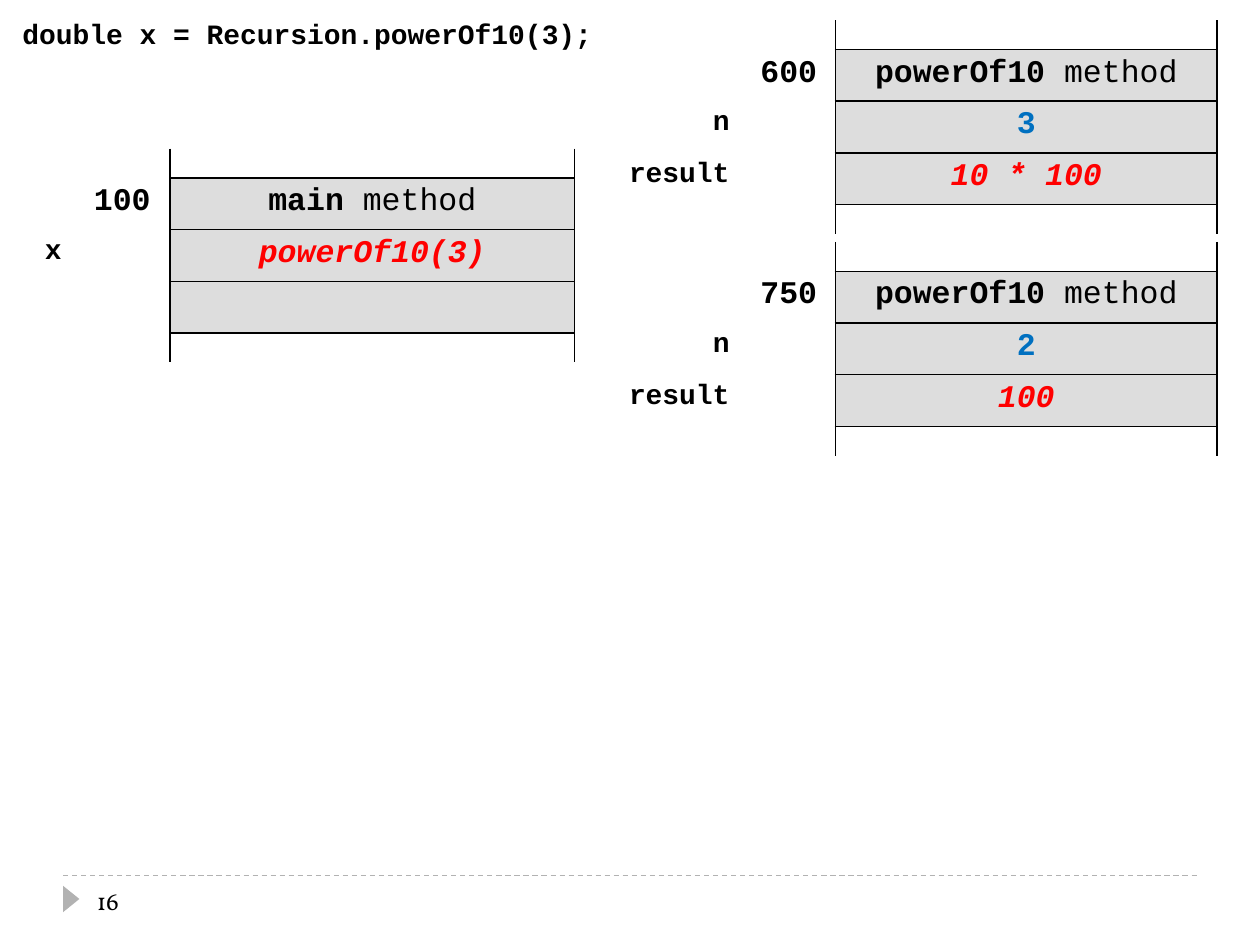
from lxml.etree import SubElement
from pptx import Presentation
from pptx.dml.color import RGBColor
from pptx.enum.dml import MSO_LINE
from pptx.enum.shapes import MSO_CONNECTOR, MSO_SHAPE
from pptx.enum.text import MSO_ANCHOR, PP_ALIGN
from pptx.oxml.ns import qn
from pptx.util import Inches, Pt

CODE = "Courier New"
BLACK, BLUE, RED = "000000", "0070C0", "FF0000"
GRAY, RULE = "DDDDDD", "B2B2B2"
HEIGHTS = [0.23, 0.41, 0.41, 0.41, 0.23]
PLAIN = "{2D5ABB26-0587-4C30-8999-92F81FD0307C}"  # no style, no grid


def color(code):
    return RGBColor.from_string(code)


def style(run, size, code=BLACK, face=CODE, bold=True, italic=False):
    font = run.font
    font.size, font.name = Pt(size), face
    font.bold, font.italic = bold, italic
    font.color.rgb = color(code)


def add_text(slide, box, text, size, face, bold, wrap):
    frame = slide.shapes.add_textbox(*map(Inches, box)).text_frame
    frame.word_wrap = wrap
    frame.vertical_anchor = MSO_ANCHOR.MIDDLE
    frame.text = text
    style(frame.paragraphs[0].runs[0], size, face=face, bold=bold)


def write(cell, text, size, align=PP_ALIGN.CENTER, code=BLACK, italic=False):
    para = cell.text_frame.paragraphs[0]
    para.text = text
    para.alignment = align
    for run in para.runs:
        style(run, size, code, italic=italic)
    return para


def border(cell, sides):
    props = cell._tc.get_or_add_tcPr()
    for spot, side in enumerate(sides):
        line = props.makeelement(qn(f"a:ln{side}"), {"w": str(Pt(1))})
        fill = SubElement(line, qn("a:solidFill"))
        SubElement(fill, qn("a:srgbClr"), val=BLACK)
        props.insert(spot, line)


def add_frame(slide, left, top, widths, address, method, slots):
    """Draw a stack frame; slots hold (name, value, colour, italic)."""
    shape = slide.shapes.add_table(
        len(HEIGHTS), len(widths), Inches(left), Inches(top),
        Inches(sum(widths)), Inches(sum(HEIGHTS)))
    table = shape.table
    table.first_row = table.horz_banding = False
    table._tbl.tblPr.find(qn("a:tableStyleId")).text = PLAIN
    for col, width in zip(table.columns, widths):
        col.width = Inches(width)
    for row, height in zip(table.rows, HEIGHTS):
        row.height = Inches(height)

    para = write(table.cell(1, 2), method + " ", 18)
    word = para.add_run()
    word.text = "method"
    style(word, 18, bold=False)
    write(table.cell(1, 1), address, 18)
    for row, (name, value, code, italic) in enumerate(slots, 2):
        write(table.cell(row, 0), name, 16, PP_ALIGN.RIGHT)
        write(table.cell(row, 2), value, 18, code=code, italic=italic)

    for cell in table.iter_cells():
        if not cell.text:  # small type keeps the end rows low
            SubElement(cell.text_frame.paragraphs[0]._p,
                       qn("a:endParaRPr"), sz="800")
    last = len(HEIGHTS) - 1
    for row in range(len(HEIGHTS)):
        cell = table.cell(row, 2)
        if 0 < row < last:
            cell.fill.solid()
            cell.fill.fore_color.rgb = color(GRAY)
        border(cell, {0: "LRB", last: "LRT"}.get(row, "LRTB"))


def add_footer(slide, number):
    line = slide.shapes.add_connector(
        MSO_CONNECTOR.STRAIGHT, Inches(0.5), Inches(6.95),
        Inches(9.5), Inches(6.95))
    line.line.color.rgb = color(RULE)
    line.line.width = Pt(0.75)
    line.line.dash_style = MSO_LINE.DASH
    SubElement(line._element.spPr, qn("a:effectLst"))

    mark = slide.shapes.add_shape(
        MSO_SHAPE.ISOSCELES_TRIANGLE, Inches(0.46), Inches(7.07),
        Inches(0.21), Inches(0.13))
    mark.rotation = 90
    mark.shadow.inherit = False
    mark.fill.solid()
    mark.fill.fore_color.rgb = color(RULE)
    mark.line.fill.background()
    add_text(slide, (0.67, 6.95, 2.17, 0.4), number, 14,
             "Vollkorn", False, True)


def main():
    deck = Presentation()
    deck.slide_width, deck.slide_height = Inches(10), Inches(7.5)
    slide = deck.slides.add_slide(deck.slide_layouts[6])
    add_footer(slide, "16")

    calls = [("600", "3", "10 * 100"), ("750", "2", "100")]
    for i, (address, n, result) in enumerate(calls):
        add_frame(slide, 4.72, 0.16 + 1.76 * i, [1.17, 0.74, 3.03],
                  address, "powerOf10",
                  [("n", n, BLUE, False), ("result", result, RED, True)])
    add_frame(slide, 0.06, 1.18, [0.53, 0.76, 3.21], "100", "main",
              [("x", "powerOf10(3)", RED, True)])

    add_text(slide, (0.08, 0.08, 4.79, 0.37),
             "double x = Recursion.powerOf10(3);", 16, CODE, True, False)
    deck.save("out.pptx")


if __name__ == "__main__":
    main()
